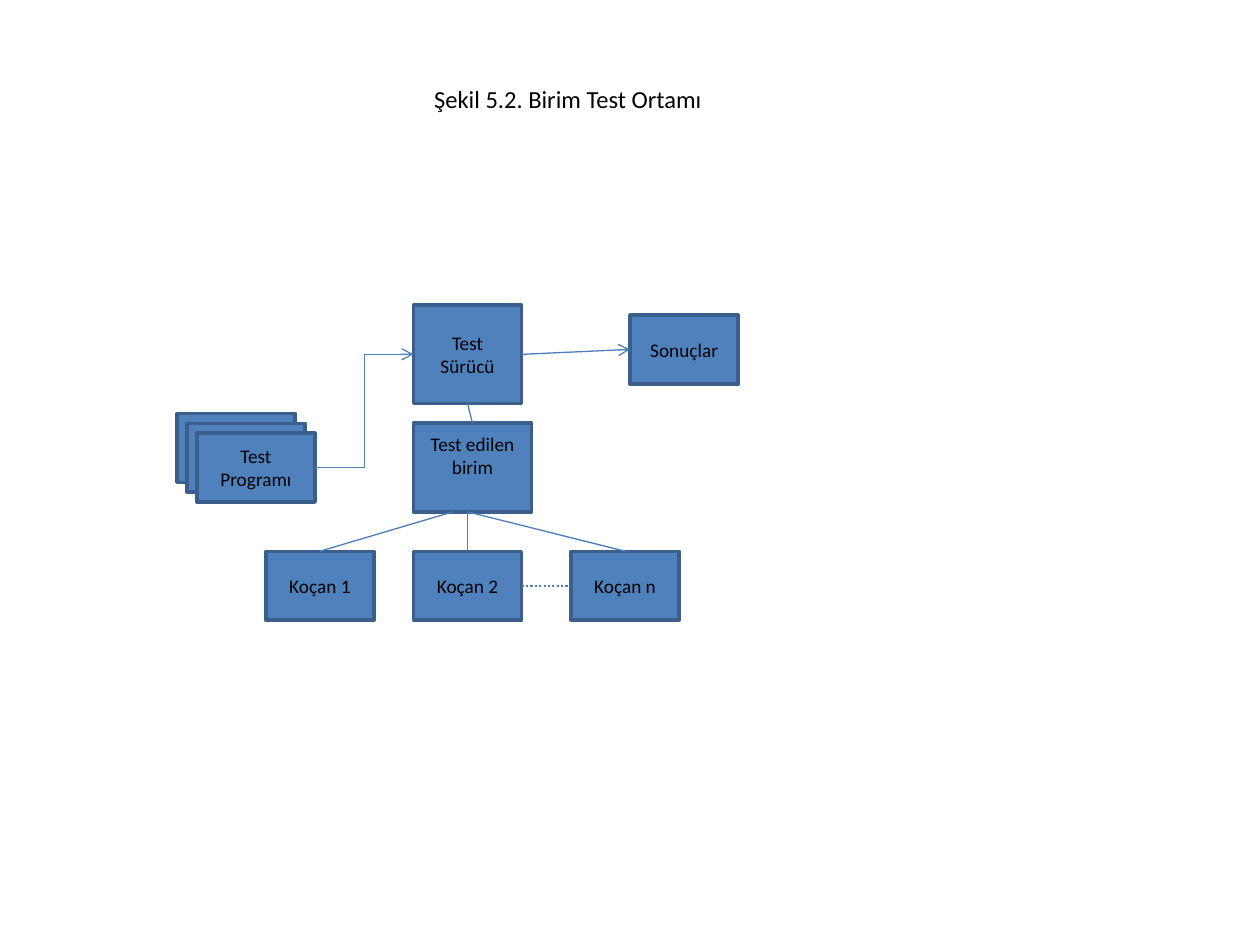
"""Build the unit test environment diagram slide."""
from dataclasses import dataclass

from lxml import etree
from pptx import Presentation
from pptx.dml.color import RGBColor
from pptx.enum.dml import MSO_LINE
from pptx.enum.shapes import MSO_CONNECTOR, MSO_SHAPE
from pptx.enum.text import MSO_ANCHOR, PP_ALIGN
from pptx.oxml.ns import qn
from pptx.util import Inches, Pt

RECTANGLE = MSO_SHAPE.RECTANGLE
STRAIGHT, ELBOW = MSO_CONNECTOR.STRAIGHT, MSO_CONNECTOR.ELBOW
DOTTED = MSO_LINE.ROUND_DOT
MIDDLE, CENTER = MSO_ANCHOR.MIDDLE, PP_ALIGN.CENTER
TOP, LEFT, BOTTOM, RIGHT = range(4)
COLUMNS, ROWS = 128, 96


@dataclass(frozen=True)
class Theme:
    font: str = "Calibri"
    background: RGBColor = RGBColor.from_string("FFFFFF")
    ink: RGBColor = RGBColor.from_string("000000")
    box_fill: RGBColor = RGBColor.from_string("4F81BD")
    box_edge: RGBColor = RGBColor.from_string("3A5F8C")
    link: RGBColor = RGBColor.from_string("4B7EBC")
    title_size: float = 14
    label_size: float = 11
    edge_width: float = 2
    link_width: float = 0.75
    dotted_width: float = 1.25


class Diagram:
    def __init__(self, deck, theme):
        self.theme = theme
        self.column = deck.slide_width / COLUMNS
        self.row = deck.slide_height / ROWS
        self.slide = deck.slides.add_slide(deck.slide_layouts[6])
        backdrop = self.slide.background.fill
        backdrop.solid()
        backdrop.fore_color.rgb = theme.background

    def place(self, *cells):
        units = (self.column, self.row) * 2
        return [round(cell * unit) for cell, unit in zip(cells, units)]

    def set_label(self, frame, wording, size):
        frame.word_wrap = True
        frame.vertical_anchor = MIDDLE
        frame.text = wording
        paragraph = frame.paragraphs[0]
        paragraph.alignment = CENTER
        font = paragraph.runs[0].font
        font.name, font.size = self.theme.font, Pt(size)
        font.color.rgb = self.theme.ink

    def title(self, wording, *cells):
        heading = self.slide.shapes.add_textbox(*self.place(*cells))
        self.set_label(heading.text_frame, wording, self.theme.title_size)

    def box(self, left, top, width=11, height=7, label=None):
        part = self.slide.shapes.add_shape(RECTANGLE, *self.place(left, top, width, height))
        part.shadow.inherit = False
        part.fill.solid()
        part.fill.fore_color.rgb = self.theme.box_fill
        part.line.color.rgb = self.theme.box_edge
        part.line.width = Pt(self.theme.edge_width)
        if label:
            self.set_label(part.text_frame, label, self.theme.label_size)
        return part

    def link(self, target, target_side, source=None, source_side=None,
             start=(0, 0), kind=STRAIGHT, arrow=False, dotted=False):
        origin = self.place(*start)
        joint = self.slide.shapes.add_connector(kind, *origin, *origin)
        if source is not None:
            joint.begin_connect(source, source_side)
        joint.end_connect(target, target_side)
        joint.line.color.rgb = self.theme.link
        joint.line.width = Pt(self.theme.dotted_width if dotted else self.theme.link_width)
        if dotted:
            joint.line.dash_style = DOTTED
        properties = joint._element.spPr
        if arrow:
            etree.SubElement(properties.find(qn("a:ln")), qn("a:tailEnd"), type="arrow")
        etree.SubElement(properties, qn("a:effectLst"))


def main():
    deck = Presentation()
    deck.slide_width, deck.slide_height = Inches(10), Inches(7.5)
    diagram = Diagram(deck, Theme())
    diagram.title("Şekil 5.2. Birim Test Ortamı", 6.4, 6, 102.6, 8)

    for step in range(2):
        diagram.box(18 + step, 42 + step, width=12)
    program = diagram.box(20, 44, width=12, label="Test Programı")
    driver = diagram.box(42, 31, height=10, label="Test Sürücü")
    results = diagram.box(64, 32, label="Sonuçlar")
    unit = diagram.box(42, 43, width=12, height=9, label="Test edilen birim")
    unit.text_frame.margin_bottom = Inches(0.25)

    stubs = [diagram.box(left, 56, label=f"Koçan {number}")
             for left, number in ((27, "1"), (42, "2"), (58, "n"))]
    for stub, start_column in zip(stubs, (46, 47.5, 47.5)):
        diagram.link(stub, TOP, start=(start_column, 52))

    diagram.link(driver, LEFT, program, RIGHT, kind=ELBOW, arrow=True)
    diagram.link(results, LEFT, driver, RIGHT, arrow=True)
    diagram.link(unit, TOP, driver, BOTTOM)
    diagram.link(stubs[2], LEFT, stubs[1], RIGHT, dotted=True)
    deck.save("out.pptx")


if __name__ == "__main__":
    main()
